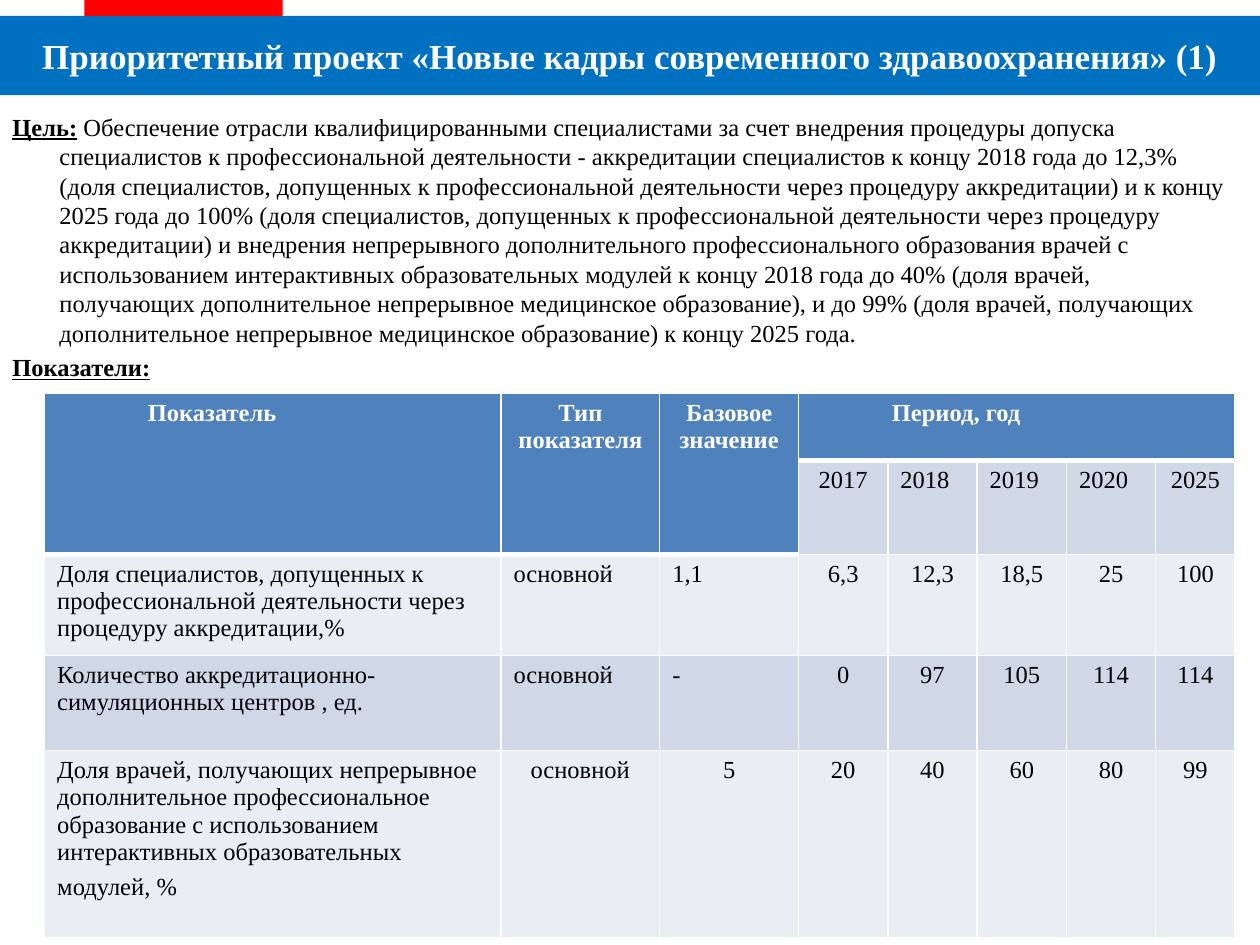
from dataclasses import dataclass

from lxml import etree
from pptx import Presentation
from pptx import util as u
from pptx.dml.color import RGBColor
from pptx.enum import shapes, text
from pptx.oxml import ns

WHITE = RGBColor(0xFF, 0xFF, 0xFF)
BLACK = RGBColor(0, 0, 0)
BLUE = RGBColor(0x00, 0x70, 0xC0)
RED = RGBColor(0xFF, 0, 0)
HEADER = RGBColor(0x4F, 0x81, 0xBD)
BAND = RGBColor(0xD0, 0xD8, 0xE8)
PALE = RGBColor(0xE9, 0xED, 0xF4)

LEFT, CENTER = text.PP_ALIGN.LEFT, text.PP_ALIGN.CENTER
SERIF = {"name": "Times New Roman", "size": u.Pt(14), "bold": False}
LABEL = SERIF | {"bold": True, "underline": True}
HEADING = SERIF | {"bold": True}
TITLE = HEADING | {"size": u.Pt(20)}
TAIL = {"name": "Calibri", "size": u.Pt(18)}

GOAL = (
    "Обеспечение отрасли квалифицированными специалистами за счет внедрения процедуры "
    "допуска специалистов к профессиональной деятельности - аккредитации специалистов "
    "к концу 2018 года до 12,3% (доля специалистов, допущенных к профессиональной "
    "деятельности через процедуру аккредитации) и к концу 2025 года до 100% (доля "
    "специалистов, допущенных к профессиональной деятельности через процедуру "
    "аккредитации) и внедрения непрерывного дополнительного профессионального "
    "образования врачей с использованием интерактивных образовательных модулей к концу "
    "2018 года до 40% (доля врачей, получающих дополнительное непрерывное медицинское "
    "образование), и до 99% (доля врачей, получающих дополнительное непрерывное "
    "медицинское образование) к концу 2025 года."
)
COLUMN_WIDTHS = (9.2, 3.2, 2.8, 1.8, 1.8, 1.8, 1.8, 1.6)
ROW_HEIGHTS = (1.36, 1.9, 1.98, 1.92, 3.76)
FIRST_YEAR = 3
YEARS = ("2017", "2018", "2019", "2020", "2025")
WIDE_MARGIN = 2.7


@dataclass(frozen=True)
class Bar:
    left: float
    top: float
    width: float
    height: float
    color: RGBColor


@dataclass(frozen=True)
class Heading:
    column: int
    wording: str
    last_row: int
    last_column: int
    right_margin: float = 0.25


@dataclass(frozen=True)
class Indicator:
    name: str
    kind: str
    base: str
    values: tuple[str, ...]
    fill: RGBColor
    base_align: text.PP_ALIGN = LEFT


HEADINGS = (
    Heading(0, "Показатель", 1, 0, WIDE_MARGIN),
    Heading(1, "Тип показателя", 1, 1),
    Heading(2, "Базовое значение", 1, 2),
    Heading(FIRST_YEAR, "Период, год", 0, 7, WIDE_MARGIN),
)
INDICATORS = (
    Indicator("Доля специалистов, допущенных к профессиональной деятельности через "
              "процедуру аккредитации,%", "основной", "1,1",
              ("6,3", "12,3", "18,5", "25", "100"), PALE),
    Indicator("Количество аккредитационно-симуляционных центров , ед.", "основной", "-",
              ("0", "97", "105", "114", "114"), BAND),
    Indicator("Доля врачей, получающих непрерывное дополнительное профессиональное "
              "образование с использованием интерактивных образовательных модулей, %",
              "основной", "5", ("20", "40", "60", "80", "99"), PALE, CENTER),
)


def add_run(paragraph, wording: str, style: dict, color: RGBColor = BLACK) -> None:
    run = paragraph.add_run()
    run.text = wording
    for attribute, value in style.items():
        setattr(run.font, attribute, value)
    run.font.color.rgb = color


def add_bar(slide, bar: Bar):
    box = (u.Cm(n) for n in (bar.left, bar.top, bar.width, bar.height))
    shape = slide.shapes.add_shape(shapes.MSO_SHAPE.RECTANGLE, *box)
    shape.shadow.inherit = False
    shape.fill.solid()
    shape.fill.fore_color.rgb = bar.color
    shape.line.fill.background()
    return shape


def add_title(slide) -> None:
    frame = add_bar(slide, Bar(0, 0.32, 25.4, 1.6, BLUE)).text_frame
    frame.word_wrap = True
    frame.vertical_anchor = text.MSO_ANCHOR.MIDDLE
    frame.paragraphs[0].alignment = CENTER
    add_run(frame.paragraphs[0],
            "Приоритетный проект «Новые кадры современного здравоохранения» (1)",
            TITLE, WHITE)


def add_goal(slide) -> None:
    frame = slide.shapes.add_textbox(u.Cm(0), u.Cm(2.13), u.Cm(25.1), u.Cm(5.8)).text_frame
    frame.word_wrap = True
    goal, indicators = frame.paragraphs[0], frame.add_paragraph()
    for paragraph in (goal, indicators):
        paragraph.space_before = u.Pt(3)
        properties = paragraph._p.get_or_add_pPr()
        properties.set("marL", str(u.Cm(0.95)))
        properties.set("indent", str(-u.Cm(0.95)))
    add_run(goal, "Цель:", LABEL)
    add_run(goal, " " + GOAL, SERIF)
    add_run(indicators, "Показатели:", LABEL)


def under_header(row: int, column: int) -> bool:
    """Tell whether the lower edge of this cell closes a heading."""
    return row == 0 or (row == 1 and column < FIRST_YEAR)


def set_borders(cell, row: int, column: int) -> None:
    above = row > 0 and under_header(row - 1, column)
    widths = {"lnL": 1, "lnR": 1, "lnT": 3 if above else 1,
              "lnB": 3 if under_header(row, column) else 1}
    properties = cell._tc.get_or_add_tcPr()
    for edge, points in widths.items():
        line = etree.SubElement(properties, ns.qn(f"a:{edge}"), w=str(u.Pt(points)))
        fill = etree.SubElement(line, ns.qn("a:solidFill"))
        etree.SubElement(fill, ns.qn("a:srgbClr"), val=str(WHITE))


def fill_cell(cell, color: RGBColor) -> None:
    cell.fill.solid()
    cell.fill.fore_color.rgb = color


def write_cell(cell, wording: str, align: text.PP_ALIGN, fill: RGBColor,
               style: dict = SERIF, color: RGBColor = BLACK) -> None:
    fill_cell(cell, fill)
    paragraph = cell.text_frame.paragraphs[0]
    paragraph.alignment = align
    add_run(paragraph, wording, style, color)


def add_indicators(slide) -> None:
    table = slide.shapes.add_table(
        len(ROW_HEIGHTS), len(COLUMN_WIDTHS), u.Cm(0.9), u.Cm(7.92),
        u.Cm(sum(COLUMN_WIDTHS)), u.Cm(sum(ROW_HEIGHTS))).table
    for column, width in zip(table.columns, COLUMN_WIDTHS):
        column.width = u.Cm(width)
    for row, height in zip(table.rows, ROW_HEIGHTS):
        row.height = u.Cm(height)
    for r in range(len(ROW_HEIGHTS)):
        for c in range(len(COLUMN_WIDTHS)):
            set_borders(table.cell(r, c), r, c)
            fill_cell(table.cell(r, c), HEADER)

    for heading in HEADINGS:
        cell = table.cell(0, heading.column)
        cell.merge(table.cell(heading.last_row, heading.last_column))
        cell.margin_right = u.Cm(heading.right_margin)
        write_cell(cell, heading.wording, CENTER, HEADER, HEADING, WHITE)
    for c, year in enumerate(YEARS, FIRST_YEAR):
        align = CENTER if year in (YEARS[0], YEARS[-1]) else LEFT
        write_cell(table.cell(1, c), year, align, BAND)
    for r, item in enumerate(INDICATORS, 2):
        wordings = (item.name, item.kind, item.base, *item.values)
        aligns = (LEFT, item.base_align, item.base_align) + (CENTER,) * len(YEARS)
        for c, (wording, align) in enumerate(zip(wordings, aligns)):
            write_cell(table.cell(r, c), wording, align, item.fill)
    add_run(table.cell(4, 0).text_frame.paragraphs[0], " ", TAIL)


def main() -> None:
    deck = Presentation()
    deck.slide_width, deck.slide_height = u.Cm(25.4), u.Cm(19.05)
    slide = deck.slides.add_slide(deck.slide_layouts[6])
    add_title(slide)
    add_bar(slide, Bar(1.7, 0, 4, 0.32, RED))
    add_goal(slide)
    add_indicators(slide)
    deck.save("out.pptx")


if __name__ == "__main__":
    main()
